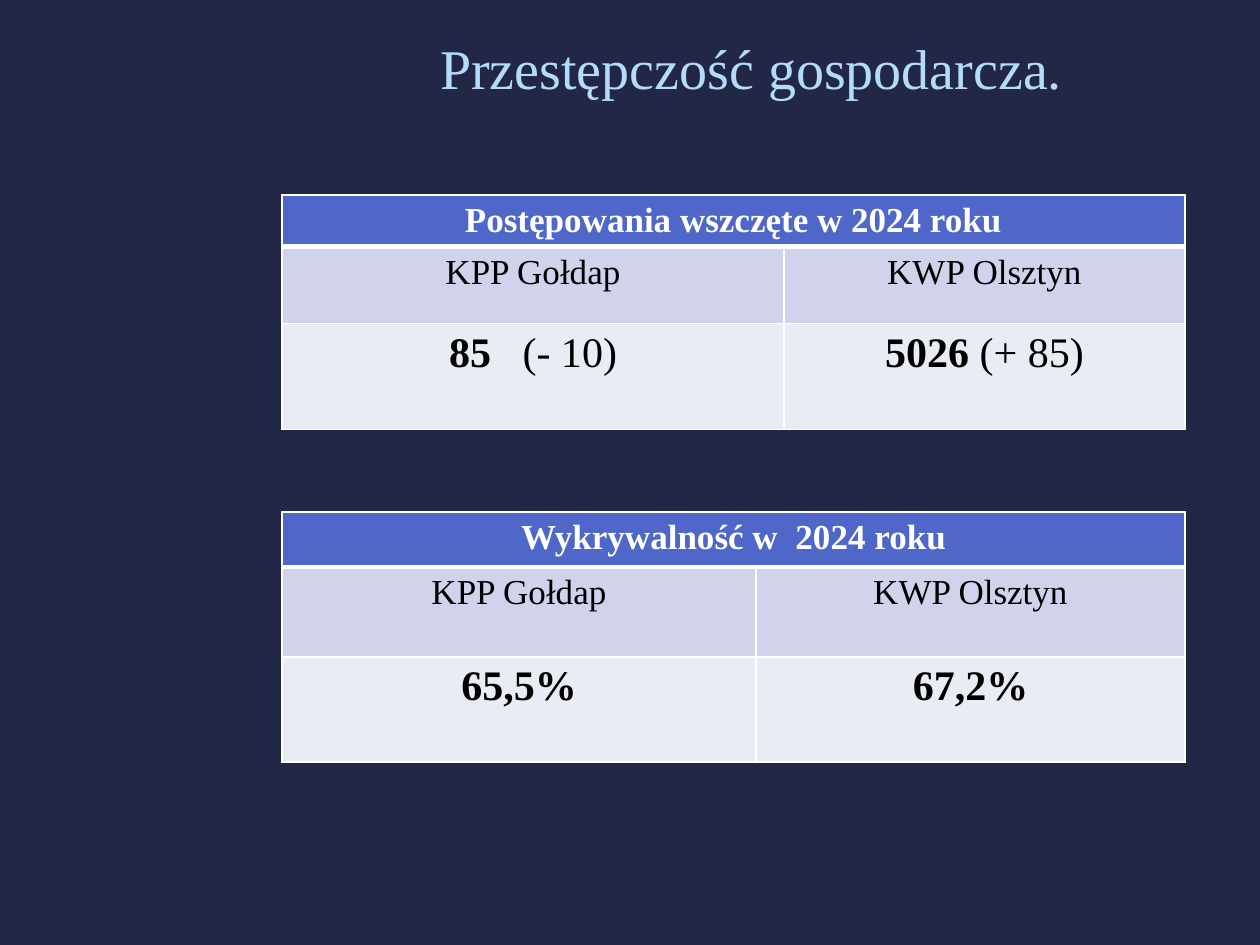
"""Build the slide on economic crime with its two comparison tables."""
from lxml import etree
from pptx import Presentation
from pptx import util as u
from pptx.dml.color import RGBColor
from pptx.enum import text
from pptx.oxml import ns

PX = 914400 // 126
FONT = "Times New Roman"
NAVY = RGBColor(0x21, 0x27, 0x45)
SKY = RGBColor(0xB4, 0xDC, 0xFA)
WHITE = RGBColor(0xFF, 0xFF, 0xFF)
BLACK = RGBColor(0x00, 0x00, 0x00)
BLUE = RGBColor(0x4E, 0x67, 0xC8)
LAVENDER = RGBColor(0xD0, 0xD3, 0xEB)
PALE = RGBColor(0xE9, 0xEB, 0xF5)
ROW_STYLES = [(BLUE, WHITE, 20), (LAVENDER, BLACK, 20), (PALE, BLACK, 24)]
OFFICES = [[("KPP Gołdap", False)], [("KWP Olsztyn", False)]]
TABLE_LEFT = 282
THIN, THICK = 1, 3


def style_paragraph(paragraph, size, color):
    """Centre a paragraph and set its font."""
    paragraph.alignment = text.PP_ALIGN.CENTER
    font = paragraph.font
    font.name, font.size = FONT, u.Pt(size)
    font.color.rgb = color


def set_borders(cell, top, bottom):
    """Draw white borders around a cell, with widths in points."""
    properties = cell._tc.get_or_add_tcPr()
    widths = {"lnL": THIN, "lnR": THIN, "lnT": top, "lnB": bottom}
    for position, (tag, width) in enumerate(widths.items()):
        line = etree.Element(ns.qn(f"a:{tag}"), w=str(u.Pt(width)))
        fill = etree.SubElement(line, ns.qn("a:solidFill"))
        etree.SubElement(fill, ns.qn("a:srgbClr"), val=str(WHITE))
        properties.insert(position, line)


def fill_cell(cell, runs, row):
    """Write (text, bold[, extra spacing in points]) runs and style the cell."""
    background, color, size = ROW_STYLES[row]
    cell.fill.solid()
    cell.fill.fore_color.rgb = background
    set_borders(cell, THICK if row == 1 else THIN, THICK if row == 0 else THIN)
    paragraph = cell.text_frame.paragraphs[0]
    style_paragraph(paragraph, size, color)
    for content, bold, *spacing in runs:
        run = paragraph.add_run()
        run.text, run.font.bold = content, bold
        if spacing:
            run._r.get_or_add_rPr().set("spc", str(spacing[0] * 100))


def add_comparison(slide, top, widths, heights, heading, values):
    """Add a table with a merged heading, the offices and their values."""
    frame = slide.shapes.add_table(
        len(heights), len(widths), TABLE_LEFT * PX, top * PX,
        sum(widths) * PX, sum(heights) * PX)
    table = frame.table
    for column, width in zip(table.columns, widths):
        column.width = width * PX
    for row, height in zip(table.rows, heights):
        row.height = height * PX
    for row, contents in enumerate([[heading, []], OFFICES, values]):
        for column, runs in enumerate(contents):
            fill_cell(table.cell(row, column), runs, row)
    table.cell(0, 0).merge(table.cell(0, 1))


def add_title(slide, content):
    """Place and format the slide title."""
    title = slide.shapes.title
    title.left, title.top, title.width, title.height = (
        length * PX for length in (243, 0, 1017, 135))
    frame = title.text_frame
    frame.text = content
    frame.vertical_anchor = text.MSO_ANCHOR.MIDDLE
    style_paragraph(frame.paragraphs[0], 32, SKY)


def main():
    """Build and save the presentation."""
    presentation = Presentation()
    presentation.slide_width, presentation.slide_height = 1260 * PX, 945 * PX
    slide = presentation.slides.add_slide(presentation.slide_layouts[5])
    slide.background.fill.solid()
    slide.background.fill.fore_color.rgb = NAVY
    add_comparison(
        slide, 195, (502, 401), (51, 77, 106),
        [("Postępowania wszczęte w 2024 roku", True)],
        [[("85", True), (" ", True, 12), ("(- 10)", False)],
         [("5026", True), (" (+ 85)", False)]])
    add_comparison(
        slide, 512, (474, 429), (55, 90, 105),
        [("Wykrywalność w", True), (" ", True, 5), ("2024 roku", True)],
        [[("65,5%", True)], [("67,2%", True)]])
    add_title(slide, "Przestępczość gospodarcza.")
    presentation.save("out.pptx")


if __name__ == "__main__":
    main()
